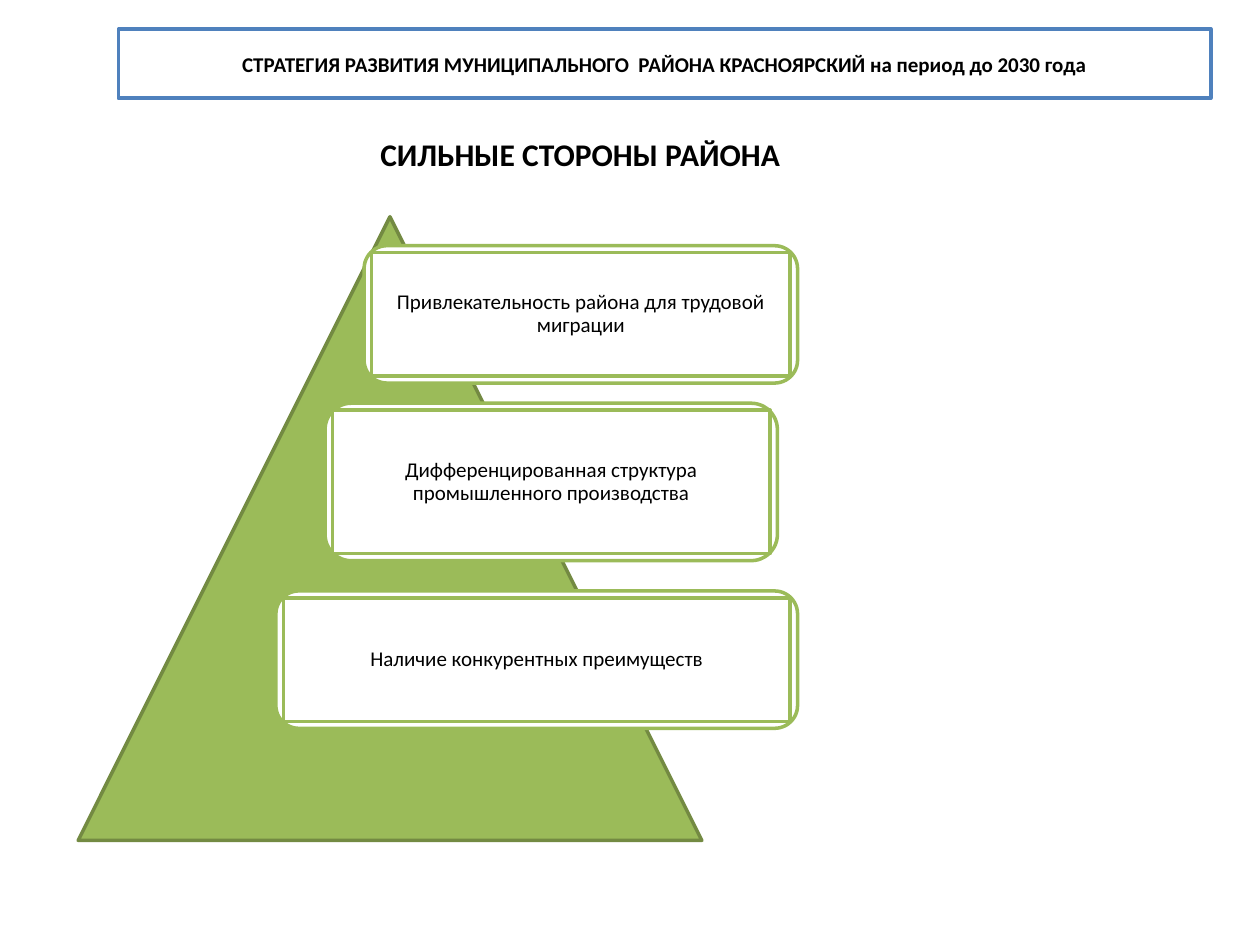
from pptx import Presentation
from pptx import util as u
from pptx.dml.color import RGBColor
from pptx.enum import shapes, text

WHITE = RGBColor(0xFF, 0xFF, 0xFF)
BLACK = RGBColor(0x00, 0x00, 0x00)
BLUE = RGBColor(0x4F, 0x81, 0xBD)
GREEN = RGBColor(0x9B, 0xBB, 0x59)
DARK_GREEN = RGBColor(0x73, 0x8A, 0x42)
KIND = shapes.MSO_SHAPE

presentation = Presentation()
presentation.slide_width = u.Inches(10)
presentation.slide_height = u.Inches(7.5)
slide = presentation.slides.add_slide(presentation.slide_layouts[6])

# Grid of 100 columns by 75 rows
COLUMN = presentation.slide_width / 100
ROW = presentation.slide_height / 75


def add_box(kind, left, top, width, height, fill, line):
    """Add an outlined shape placed in grid columns and rows."""
    shape = slide.shapes.add_shape(
        kind, u.Emu(round(left * COLUMN)), u.Emu(round(top * ROW)),
        u.Emu(round(width * COLUMN)), u.Emu(round(height * ROW)))
    shape.shadow.inherit = False
    shape.fill.solid()
    shape.fill.fore_color.rgb = fill
    shape.line.color.rgb = line
    shape.line.width = u.Pt(2)
    return shape


def write(shape, words, size, bold=False):
    """Put one centred line of text into the shape and return its paragraph."""
    shape.text_frame.vertical_anchor = text.MSO_ANCHOR.MIDDLE
    paragraph = shape.text_frame.paragraphs[0]
    paragraph.alignment = text.PP_ALIGN.CENTER
    run = paragraph.add_run()
    run.text = words
    run.font.name = "Calibri"
    run.font.size = u.Pt(size)
    run.font.bold = bold
    run.font.color.rgb = BLACK
    return paragraph


header = add_box(KIND.RECTANGLE, 9.4, 2.3, 86.7, 5.5, WHITE, BLUE)
write(header, "СТРАТЕГИЯ РАЗВИТИЯ МУНИЦИПАЛЬНОГО  РАЙОНА КРАСНОЯРСКИЙ на период до 2030 года",
      12, bold=True)

add_box(KIND.ISOSCELES_TRIANGLE, 6.2, 17.2, 49.5, 49.5, GREEN, DARK_GREEN)

# Each strength: left, top, width, height, wording
strengths = [
    (28.9, 19.5, 34.4, 10.9, "Привлекательность района для трудовой миграции"),
    (25.8, 32, 35.9, 12.5, "Дифференцированная структура промышленного производства"),
    (21.9, 46.9, 41.4, 10.9, "Наличие конкурентных преимуществ"),
]
INSET_X, INSET_Y = 0.6, 0.55
for left, top, width, height, words in strengths:
    add_box(KIND.ROUNDED_RECTANGLE, left, top, width, height, WHITE, GREEN)
    label = add_box(KIND.RECTANGLE, left + INSET_X, top + INSET_Y,
                    width - 2 * INSET_X, height - 2 * INSET_Y, WHITE, GREEN)
    frame = label.text_frame
    frame.word_wrap = True
    frame.margin_left = frame.margin_right = u.Inches(0.05)
    frame.margin_top = frame.margin_bottom = u.Inches(0.05)
    paragraph = write(label, words, 12)
    paragraph.line_spacing = 0.9
    paragraph.space_after = u.Pt(4.2)

title = slide.shapes.add_textbox(
    u.Emu(round(26.6 * COLUMN)), u.Emu(round(10.2 * ROW)),
    u.Emu(round(38.9 * COLUMN)), u.Emu(round(4 * ROW)))
title.text_frame.word_wrap = False
title.text_frame.auto_size = text.MSO_AUTO_SIZE.SHAPE_TO_FIT_TEXT
write(title, "СИЛЬНЫЕ СТОРОНЫ РАЙОНА", 18, bold=True)
title.text_frame.vertical_anchor = text.MSO_ANCHOR.TOP

presentation.save("out.pptx")
